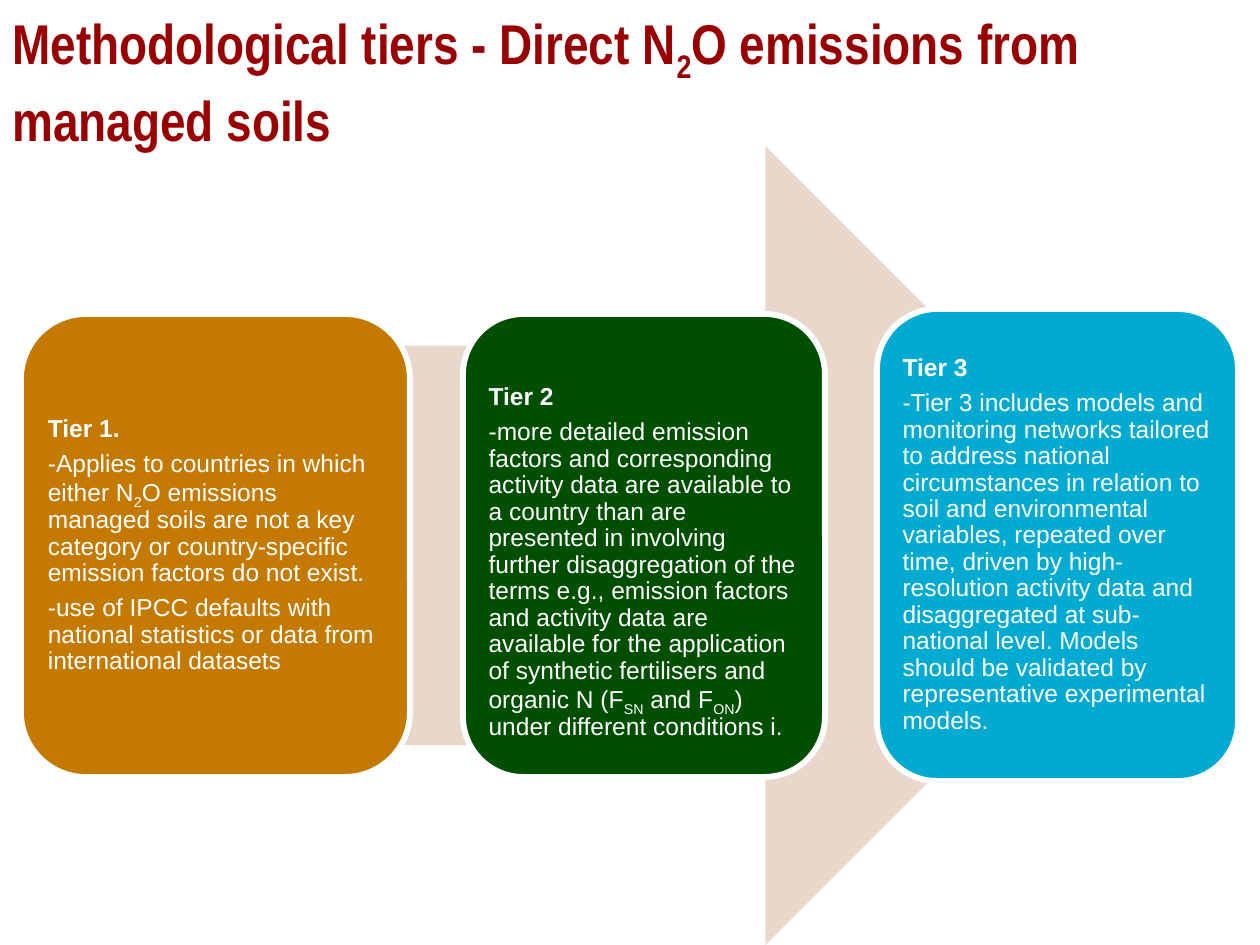
from dataclasses import dataclass

from pptx import Presentation
from pptx.dml.color import RGBColor
from pptx.enum.shapes import MSO_SHAPE
from pptx.enum.text import MSO_ANCHOR, PP_ALIGN
from pptx.util import Emu, Pt

ARROW = MSO_SHAPE.RIGHT_ARROW
CARD = MSO_SHAPE.ROUNDED_RECTANGLE
MIDDLE = MSO_ANCHOR.MIDDLE
LEFT = PP_ALIGN.LEFT
PX_PER_INCH = 126
SUBSCRIPT_MARK = "~"


@dataclass(frozen=True)
class Theme:
    title_font: str = "Arial Narrow"
    body_font: str = "Arial"
    title_size: int = 32
    body_size: int = 14
    outline_width: float = 3.35
    line_spacing: float = 0.9
    space_after: float = 4.9
    title: str = "990002"
    arrow: str = "EAD7CC"
    white: str = "FFFFFF"
    tier_1: str = "C47900"
    tier_2: str = "004F00"
    tier_3: str = "00AAD0"


THEME = Theme()

TITLE = "Methodological tiers - Direct N~2~O emissions from managed soils"

TIERS = [
    ((21, 314, 389, 463), THEME.tier_1, 0, "Tier 1.", [
        "-Applies to countries in which either N~2~O emissions managed soils are "
        "not a key category or country-specific emission factors do not exist.",
        "-use of IPCC defaults with national statistics or data from "
        "international datasets",
    ]),
    ((463, 314, 362, 463), THEME.tier_2, 35, "Tier 2", [
        "-more detailed emission factors and corresponding activity data are "
        "available to a country than are presented in involving further "
        "disaggregation of the terms e.g., emission factors and activity data "
        "are available for the application of synthetic fertilisers and "
        "organic N (F~SN~ and F~ON~) under different conditions i.",
    ]),
    ((877, 309, 361, 472), THEME.tier_3, 0, "Tier 3", [
        "-Tier 3 includes models and monitoring networks tailored to address "
        "national circumstances in relation to soil and environmental "
        "variables, repeated over time, driven by high-resolution activity "
        "data and disaggregated at sub-national level. Models should be "
        "validated by representative experimental models.",
    ]),
]


def px(length):
    return Emu(round(length * 914400 / PX_PER_INCH))


def color(value):
    return RGBColor.from_string(value)


def write_runs(paragraph, text, font_name, size, ink, bold):
    for index, part in enumerate(text.split(SUBSCRIPT_MARK)):
        run = paragraph.add_run()
        run.text = part
        run.font.name = font_name
        run.font.size = Pt(size)
        run.font.bold = bold
        run.font.color.rgb = color(ink)
        if index % 2:
            run.font._element.set("baseline", "-25000")


def add_title(slide, box, text):
    title = slide.shapes.add_textbox(*map(px, box))
    frame = title.text_frame
    frame.word_wrap = True
    frame.vertical_anchor = MIDDLE
    write_runs(frame.paragraphs[0], text, THEME.title_font, THEME.title_size,
               THEME.title, True)


def add_filled_shape(slide, preset, box, fill):
    shape = slide.shapes.add_shape(preset, *map(px, box))
    shape.shadow.inherit = False
    shape.fill.solid()
    shape.fill.fore_color.rgb = color(fill)
    shape.line.fill.background()
    return shape


def add_tier(slide, box, fill, top_offset, heading, points):
    tier = add_filled_shape(slide, CARD, box, fill)
    tier.line.color.rgb = color(THEME.white)
    tier.line.width = Pt(THEME.outline_width)
    frame = tier.text_frame
    frame.word_wrap = True
    frame.vertical_anchor = MIDDLE
    frame.margin_left = frame.margin_right = frame.margin_bottom = px(8)
    frame.margin_top = px(8 + top_offset)
    for index, text in enumerate([heading, *points]):
        paragraph = frame.add_paragraph() if index else frame.paragraphs[0]
        paragraph.alignment = LEFT
        paragraph.line_spacing = THEME.line_spacing
        paragraph.space_after = Pt(THEME.space_after)
        write_runs(paragraph, text, THEME.body_font, THEME.body_size,
                   THEME.white, index == 0)


def main():
    presentation = Presentation()
    presentation.slide_width = px(1260)
    presentation.slide_height = px(945)
    slide = presentation.slides.add_slide(presentation.slide_layouts[6])
    add_title(slide, (0, 0, 1260, 161), TITLE)
    add_filled_shape(slide, ARROW, (94, 146, 1071, 799), THEME.arrow)
    for tier in TIERS:
        add_tier(slide, *tier)
    presentation.save("out.pptx")


if __name__ == "__main__":
    main()
